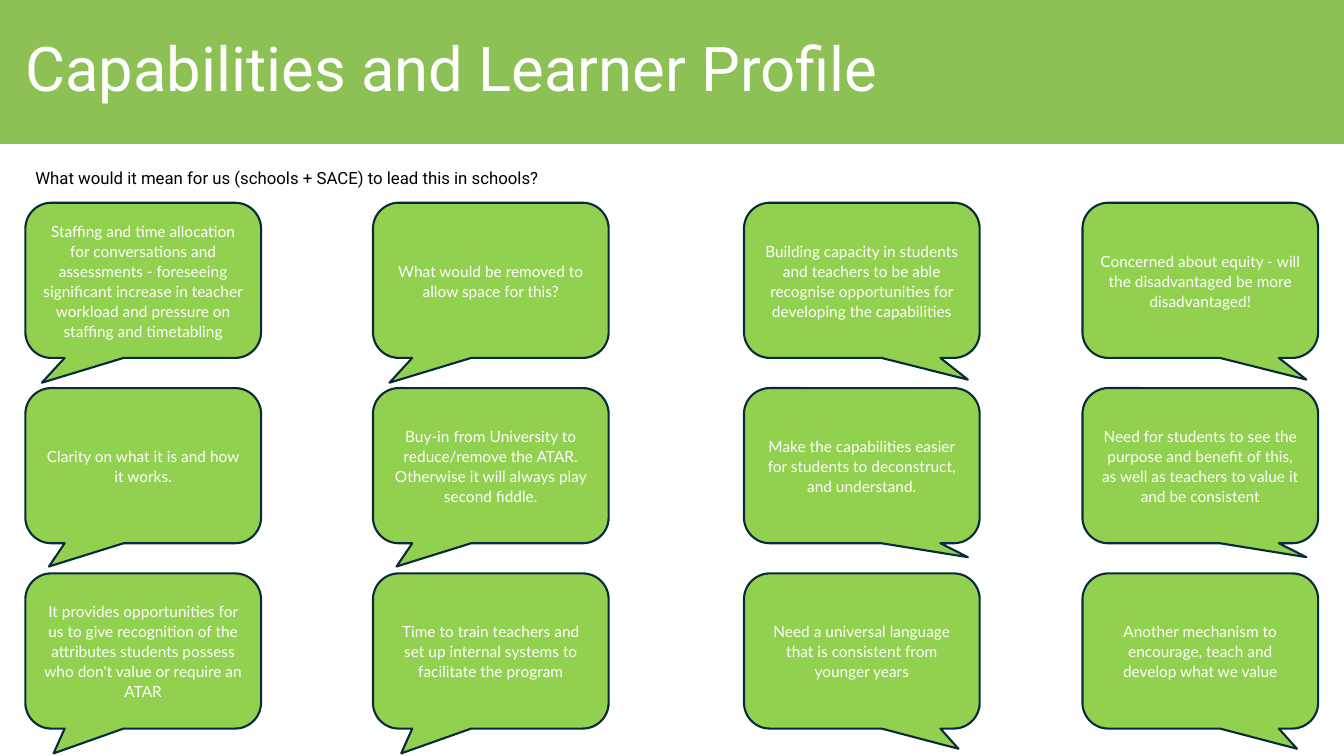
import pptx
import pptx.util
import pptx.dml.color
import pptx.enum.shapes
import pptx.enum.text
from pptx.util import Cm, Pt

TITLE = "Capabilities and Learner Profile"
QUESTION = "What would it mean for us (schools + SACE) to lead this in schools?"

# Each column: left edge in cm, side its pointers lean to, answers from top to bottom
COLUMNS = [
    (0.64, "left", [
        "Staffing and time allocation for conversations and assessments - foreseeing "
        "significant increase in teacher workload and pressure on staffing and timetabling",
        "Clarity on what it is and how it works.",
        "It provides opportunities for us to give recognition of the attributes students "
        "possess who don't value or require an ATAR",
    ]),
    (9.4, "left", [
        "What would be removed to allow space for this?",
        "Buy-in from University to reduce/remove the ATAR. "
        "Otherwise it will always play second fiddle.",
        "Time to train teachers and set up internal systems to facilitate the program",
    ]),
    (18.75, "right", [
        "Building capacity in students and teachers to be able recognise opportunities "
        "for developing the capabilities",
        "Make the capabilities easier for students to deconstruct, and understand.",
        "Need a universal language that is consistent from younger years",
    ]),
    (27.28, "right", [
        "Concerned about equity - will the disadvantaged be more disadvantaged!",
        "Need for students to see the purpose and benefit of this, as well as teachers "
        "to value it and be consistent",
        "Another mechanism to encourage, teach and develop what we value",
    ]),
]

# Pointer tip of each row, as a share of bubble size from its centre
POINTERS = {
    "left": [(-0.43, 0.66), (-0.4, 0.65), (-0.38, 0.66)],
    "right": [(0.45, 0.64), (0.45, 0.59), (0.41, 0.63)],
}
COLORS = {"banner": "8EC155", "bubble": "92D050", "outline": "092A39",
          "light": "FFFFFF", "dark": "000000"}
SLIDE_WIDTH, SLIDE_HEIGHT = 33.87, 19.05
BUBBLE_WIDTH, BUBBLE_HEIGHT = 5.94, 3.91
FIRST_ROW, ROW_STEP = 5.11, 4.67

SHAPE = pptx.enum.shapes.MSO_SHAPE
ALIGN = pptx.enum.text.PP_ALIGN
ANCHOR = pptx.enum.text.MSO_ANCHOR


def color(name):
    return pptx.dml.color.RGBColor.from_string(COLORS[name])


def write(shape, text, *, size, font, ink, align=ALIGN.LEFT, anchor=ANCHOR.MIDDLE,
          line_spacing=1.0, space_after=0, left_inset=0.25):
    frame = shape.text_frame
    frame.word_wrap = True
    frame.vertical_anchor = anchor
    frame.margin_left = Cm(left_inset)
    para = frame.paragraphs[0]
    para.alignment = align
    para.line_spacing = line_spacing
    para.space_after = Pt(space_after)
    span = para.add_run()
    span.text = text
    span.font.size = Pt(size)
    span.font.name = font
    span.font.color.rgb = color(ink)


def add_filled(page, kind, left, top, width, height, fill):
    shape = page.shapes.add_shape(kind, Cm(left), Cm(top), Cm(width), Cm(height))
    shape.shadow.inherit = False
    shape.fill.solid()
    shape.fill.fore_color.rgb = color(fill)
    return shape


def add_bubble(page, left, top, pointer, text):
    bubble = add_filled(page, SHAPE.ROUNDED_RECTANGULAR_CALLOUT, left, top,
                        BUBBLE_WIDTH, BUBBLE_HEIGHT, "bubble")
    bubble.adjustments[0], bubble.adjustments[1] = pointer
    bubble.line.color.rgb = color("outline")
    bubble.line.width = Pt(1.5)
    write(bubble, text, size=11, font="Lato", ink="light", align=ALIGN.CENTER,
          line_spacing=1.08, space_after=6)


def main():
    deck = pptx.Presentation()
    deck.slide_width, deck.slide_height = Cm(SLIDE_WIDTH), Cm(SLIDE_HEIGHT)
    page = deck.slides.add_slide(deck.slide_layouts[6])

    # Title banner
    banner = add_filled(page, SHAPE.RECTANGLE, 0, 0, SLIDE_WIDTH, 3.63, "banner")
    banner.line.fill.background()
    write(banner, TITLE, size=44, font="Roboto", ink="light",
          line_spacing=0.9, left_inset=0.64)

    # Question
    box = page.shapes.add_textbox(Cm(0.64), Cm(4.11), Cm(14.5), Cm(0.76))
    write(box, QUESTION, size=12, font="Roboto", ink="dark",
          anchor=ANCHOR.TOP, space_after=6)

    # Speech bubbles
    for left, side, answers in COLUMNS:
        for row, (answer, pointer) in enumerate(zip(answers, POINTERS[side])):
            add_bubble(page, left, FIRST_ROW + row * ROW_STEP, pointer, answer)

    deck.save("out.pptx")


if __name__ == "__main__":
    main()
